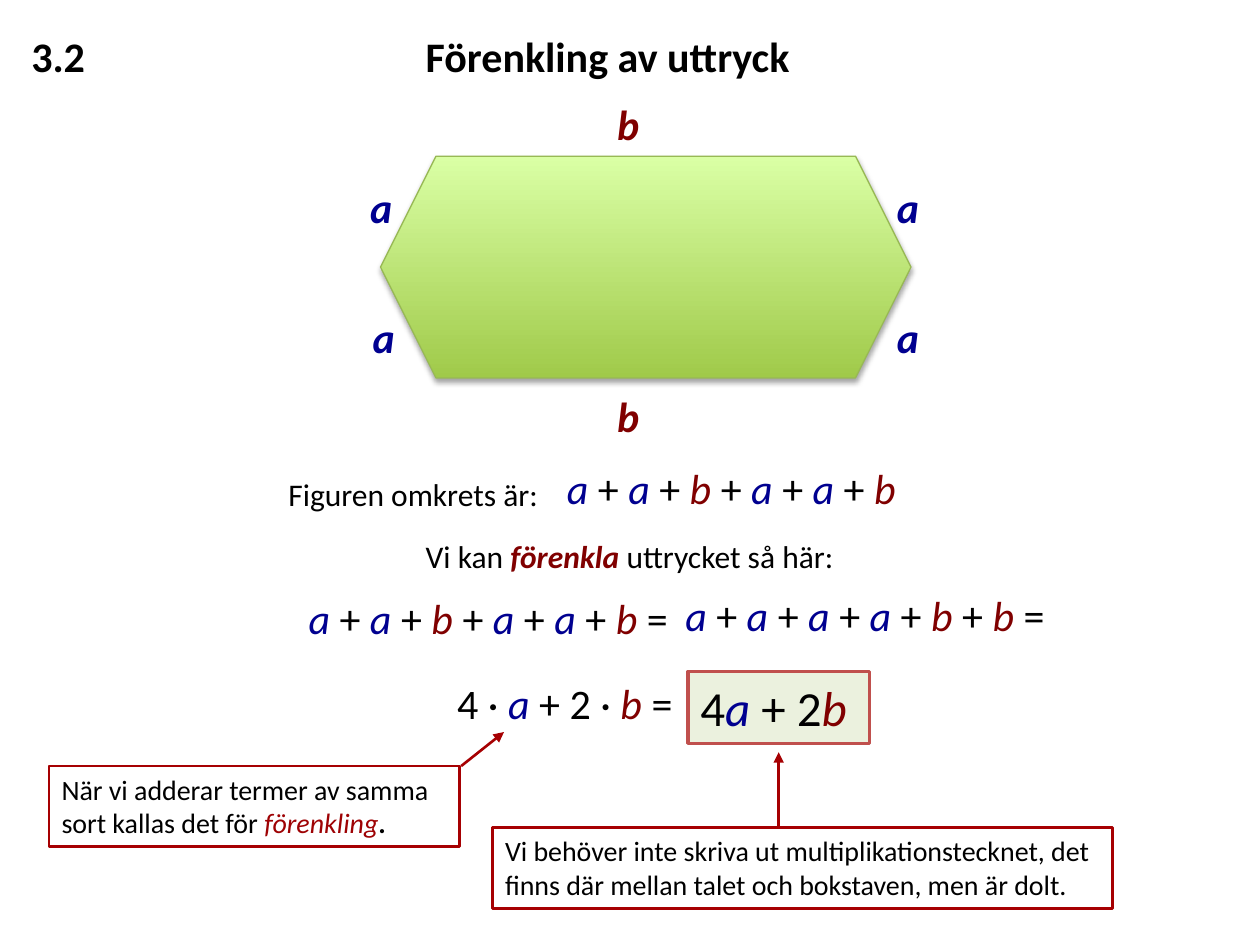
from itertools import groupby

from lxml import etree
from pptx import Presentation
from pptx.dml.color import RGBColor
from pptx.enum.shapes import MSO_CONNECTOR, MSO_SHAPE
from pptx.enum.text import MSO_ANCHOR, PP_ALIGN
from pptx.oxml import parse_xml
from pptx.oxml.ns import nsdecls, qn
from pptx.util import Inches, Pt

RECTANGLE, HEXAGON = MSO_SHAPE.RECTANGLE, MSO_SHAPE.HEXAGON
STRAIGHT, LEFT, TOP = MSO_CONNECTOR.STRAIGHT, PP_ALIGN.LEFT, MSO_ANCHOR.TOP

FONT = "Calibri"
BLACK, BLUE, RED = "000000", "000090", "800000"
NOTE_LINE, NOTE_WORD = "A60002", "9E0204"
VARIABLE_COLOURS = {"a": BLUE, "b": RED}

SECTION, TITLE = "3.2", "Förenkling av uttryck"
TITLE_TAB = 3.13

HEXAGON_BOX = (3.02, 1.24, 4.21, 1.76)
LABEL_SIZE = (0.43, 0.5)
SIDE_LABELS = [
    ("b", 4.8, 0.73), ("b", 4.8, 3.05),
    ("a", 2.84, 1.39), ("a", 7.02, 1.39),
    ("a", 2.86, 2.42), ("a", 7.02, 2.42),
]

# Runs are (text, colour, bold, italic)
SENTENCES = [
    ((2.19, 3.72, 2.21, 0.4), [("Figuren omkrets är:", BLACK, False, False)]),
    ((3.28, 4.21, 3.54, 0.4), [
        ("Vi kan ", BLACK, False, False),
        ("förenkla", RED, True, True),
        (" uttrycket så här:", BLACK, False, False)]),
]
EXPRESSIONS = [
    ("a + a + b + a + a + b", (4.4, 3.62, 3.21, 0.5)),
    ("a + a + b + a + a + b =", (2.35, 4.65, 3.12, 0.5)),
    ("a + a + a + a + b + b =", (5.34, 4.63, 3.19, 0.5)),
    ("4 · a + 2 · b =", (3.53, 5.33, 2.01, 0.5)),
]
ANSWER, ANSWER_BOX = "4a + 2b", (5.46, 5.33, 1.44, 0.57)

# Each note has a box, its runs, and the two ends of its arrow
NOTES = [
    ((0.39, 6.08, 3.26, 0.64), [
        ("När vi adderar termer av samma sort kallas det för ", BLACK, False, False),
        ("förenkling", NOTE_WORD, False, True),
        (".", BLACK, True, False)],
     (3.66, 6.08), (4, 5.81)),
    ((3.91, 6.57, 4.92, 0.64), [
        ("Vi behöver inte skriva ut multiplikationstecknet, det finns där "
         "mellan talet och bokstaven, men är dolt.", BLACK, False, False)],
     (6.18, 6.57), (6.18, 5.97)),
]


def rgb(colour):
    return RGBColor.from_string(colour)


def inches(lengths):
    return [Inches(length) for length in lengths]


def expression_runs(expression, bold=False):
    """Set the variables in coloured italics and the rest in black."""
    return [("".join(letters), colour or BLACK, bold, colour is not None)
            for colour, letters in groupby(expression, VARIABLE_COLOURS.get)]


def write(shape, runs, size, wrap=True):
    frame = shape.text_frame
    frame.word_wrap = wrap
    frame.vertical_anchor = TOP
    paragraph = frame.paragraphs[0]
    paragraph.alignment = LEFT
    for text, colour, bold, italic in runs:
        run = paragraph.add_run()
        run.text = text
        run.font.name, run.font.size = FONT, Pt(size)
        run.font.bold, run.font.italic = bold, italic
        run.font.color.rgb = rgb(colour)


def add_text(slide, box, runs, size, wrap=True):
    textbox = slide.shapes.add_textbox(*inches(box))
    write(textbox, runs, size, wrap)
    return textbox


def add_frame(slide, box, runs, size, line, width, fill=None):
    frame = slide.shapes.add_shape(RECTANGLE, *inches(box))
    frame.shadow.inherit = False
    if fill:
        frame.fill.solid()
        frame.fill.fore_color.rgb = rgb(fill)
    else:
        frame.fill.background()
    frame.line.color.rgb = rgb(line)
    frame.line.width = Pt(width)
    write(frame, runs, size)


def add_arrow(slide, start, end):
    arrow = slide.shapes.add_connector(STRAIGHT, *inches(start + end))
    arrow.line.color.rgb = rgb(NOTE_LINE)
    arrow.line.width = Pt(1.5)
    properties = arrow.element.spPr
    etree.SubElement(properties.find(qn("a:ln")), qn("a:tailEnd"), type="triangle")
    etree.SubElement(properties, qn("a:effectLst"))


def add_title(slide):
    title = add_text(slide, (0.15, 0.19, 9.64, 0.5),
                     [(f"{SECTION}\t{TITLE}", BLACK, True, False)], 24)
    properties = title.text_frame.paragraphs[0]._p.get_or_add_pPr()
    tabs = etree.SubElement(properties, qn("a:tabLst"))
    etree.SubElement(tabs, qn("a:tab"), pos=str(Inches(TITLE_TAB)), algn="l")


def add_hexagon(slide):
    hexagon = slide.shapes.add_shape(HEXAGON, *inches(HEXAGON_BOX))
    hexagon.fill.gradient()
    hexagon.fill.gradient_angle = 90
    for stop, position, colour in zip(hexagon.fill.gradient_stops, (0, 1),
                                      ("A0CA4A", "DAFFA5")):
        stop.position = position
        stop.color.rgb = rgb(colour)
    hexagon.line.color.rgb = rgb("98B955")
    hexagon.line.width = Pt(0.75)
    hexagon.element.spPr.append(parse_xml(
        f'<a:effectLst {nsdecls("a")}><a:outerShdw blurRad="{Pt(3.1)}" '
        f'dist="{Pt(1.8)}" dir="5400000" rotWithShape="0"><a:srgbClr val="{BLACK}">'
        '<a:alpha val="35000"/></a:srgbClr></a:outerShdw></a:effectLst>'))


def main():
    deck = Presentation()
    deck.slide_width, deck.slide_height = inches((10, 7.5))
    slide = deck.slides.add_slide(deck.slide_layouts[6])

    add_title(slide)
    add_hexagon(slide)
    for side, left, top in SIDE_LABELS:
        add_text(slide, (left, top, *LABEL_SIZE), expression_runs(side, True), 24)
    for box, runs in SENTENCES:
        add_text(slide, box, runs, 18, wrap=False)
    for expression, box in EXPRESSIONS:
        add_text(slide, box, expression_runs(expression), 24, wrap=False)
    add_frame(slide, ANSWER_BOX, expression_runs(ANSWER), 28, "C0504D", 2, "EBF1DE")
    for box, runs, start, end in NOTES:
        add_frame(slide, box, runs, 16, NOTE_LINE, 1.5)
        add_arrow(slide, start, end)

    deck.save("out.pptx")


if __name__ == "__main__":
    main()
